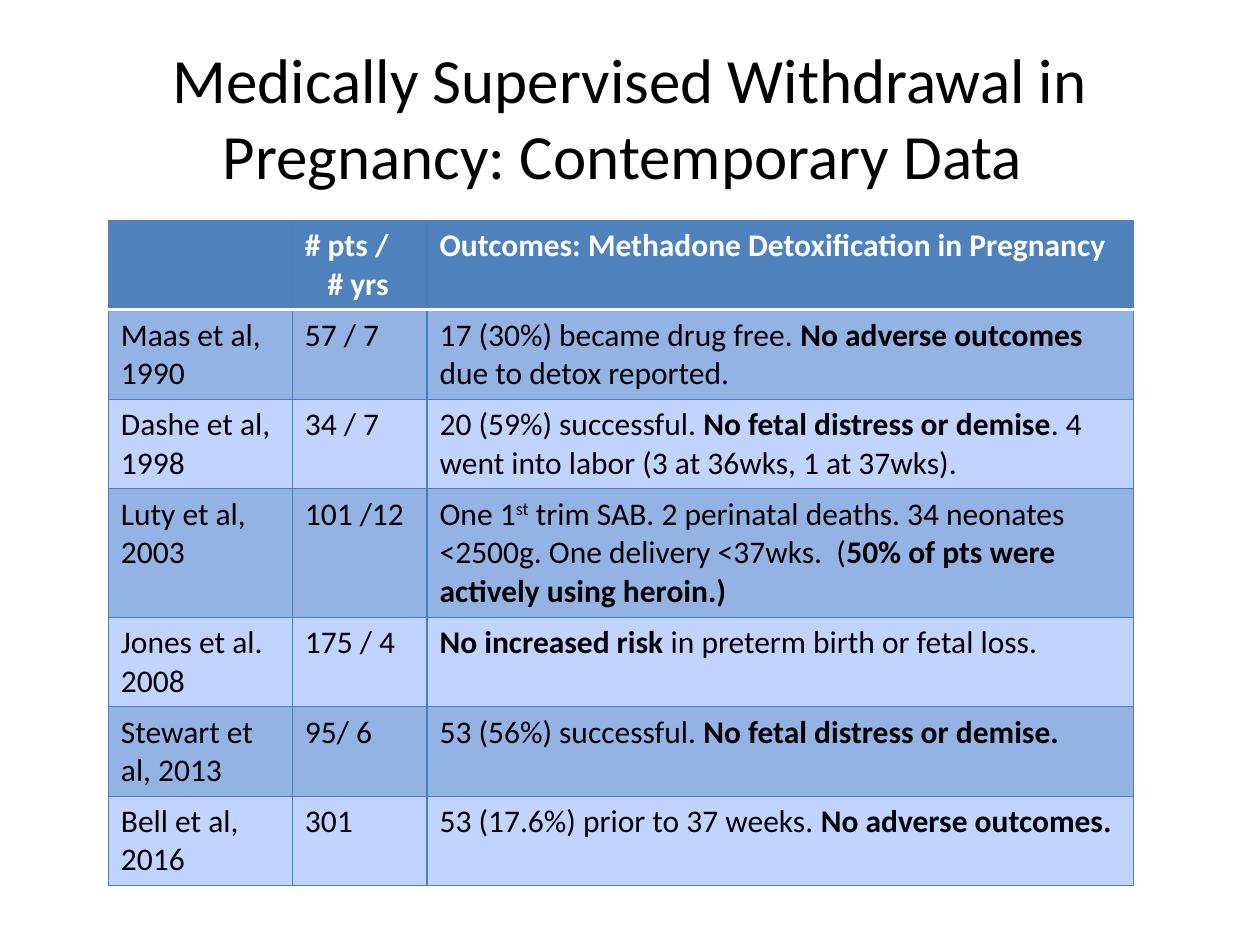
from lxml.etree import SubElement
from pptx import Presentation
from pptx.dml.color import RGBColor
from pptx.enum.text import MSO_ANCHOR, PP_ALIGN
from pptx.oxml.ns import qn
from pptx.util import Inches, Pt

BLACK = RGBColor(0x00, 0x00, 0x00)
WHITE = RGBColor(0xFF, 0xFF, 0xFF)
BLUE = RGBColor(0x4F, 0x81, 0xBD)
MID = RGBColor(0x93, 0xB3, 0xE5)
LIGHT = RGBColor(0xC0, 0xD4, 0xFF)
LINE = RGBColor(0x4B, 0x7E, 0xBC)


def add_run(para, text, size, color, bold=False):
    run = para.add_run()
    run.text = text
    font = run.font
    font.name, font.size, font.bold = "Calibri", Pt(size), bold
    font.color.rgb = color
    return run


def add_edge(cell, tag, color, width):
    edge = SubElement(cell._tc.get_or_add_tcPr(), qn(tag), w=str(Pt(width)))
    fill = SubElement(edge, qn("a:solidFill"))
    SubElement(fill, qn("a:srgbClr"), val=str(color))


deck = Presentation()
deck.slide_width, deck.slide_height = Inches(10), Inches(7.5)
slide = deck.slides.add_slide(deck.slide_layouts[6])

# Title
box = slide.shapes.add_textbox(Inches(0.5), Inches(0.3), Inches(9), Inches(1.25))
frame = box.text_frame
frame.word_wrap = True
frame.vertical_anchor = MSO_ANCHOR.MIDDLE
para = frame.paragraphs[0]
para.alignment = PP_ALIGN.CENTER
add_run(para, "Medically Supervised Withdrawal in Pregnancy: Contemporary Data ", 36, BLACK)

# Studies: name, patients / years, outcome as (text, style) runs
studies = [
    ("Maas et al, 1990", "57 / 7",
     [("17 (30%) became drug free. ", ""), ("No adverse outcomes ", "bold"),
      ("due to detox reported.", "")]),
    ("Dashe et al, 1998", "34 / 7",
     [("20 (59%) successful. ", ""), ("No fetal distress or demise", "bold"),
      (". 4 went into labor (3 at 36wks, 1 at 37wks).", "")]),
    ("Luty et al, 2003", "101 /12",
     [("One 1", ""), ("st", "super"),
      (" trim SAB. 2 perinatal deaths. 34 neonates <2500g. One delivery <37wks.  (", ""),
      ("50% of pts were actively using heroin.)", "bold")]),
    ("Jones et al. 2008", "175 / 4",
     [("No increased risk ", "bold"), ("in preterm birth or fetal loss.", "")]),
    ("Stewart et al, 2013", "95/ 6",
     [("53 (56%) successful. ", ""), ("No fetal distress or demise.", "bold")]),
    ("Bell et al, 2016", "301",
     [("53 (17.6%) prior to 37 weeks. ", ""), ("No adverse outcomes.", "bold")]),
]

# Table grid
widths = [1.46, 1.07, 5.61]
heights = [0.71, 0.71, 0.71, 1.02, 0.71, 0.71, 0.71]
table = slide.shapes.add_table(
    len(heights), len(widths), Inches(0.86), Inches(1.75),
    Inches(sum(widths)), Inches(sum(heights))).table
for col, width in zip(table.columns, widths):
    col.width = Inches(width)
for row, height in zip(table.rows, heights):
    row.height = Inches(height)

# Borders and fills; borders come first in the cell XML
for r, row in enumerate(table.rows):
    for cell in row.cells:
        add_edge(cell, "a:lnL", LINE, 0.75)
        add_edge(cell, "a:lnR", LINE, 0.75)
        add_edge(cell, "a:lnT", *((WHITE, 2) if r == 1 else (LINE, 0.75)))
        add_edge(cell, "a:lnB", *((WHITE, 2) if r == 0 else (LINE, 0.75)))
        cell.fill.solid()
        cell.fill.fore_color.rgb = BLUE if r == 0 else MID if r % 2 else LIGHT

# Header row, with the second line of the count heading indented
count = table.cell(0, 1).text_frame
add_run(count.paragraphs[0], "# pts /", 18, WHITE, True)
para = count.add_paragraph()
para._p.get_or_add_pPr().set("marL", str(Inches(0.18)))
add_run(para, "# yrs", 18, WHITE, True)
add_run(table.cell(0, 2).text_frame.paragraphs[0],
        "Outcomes: Methadone Detoxification in Pregnancy", 18, WHITE, True)

# Study rows
for r, (name, count, outcome) in enumerate(studies, 1):
    for c, parts in enumerate([[(name, "")], [(count, "")], outcome]):
        para = table.cell(r, c).text_frame.paragraphs[0]
        for text, style in parts:
            run = add_run(para, text, 18, BLACK, style == "bold")
            if style == "super":
                run._r.get_or_add_rPr().set("baseline", "30000")

deck.save("out.pptx")
